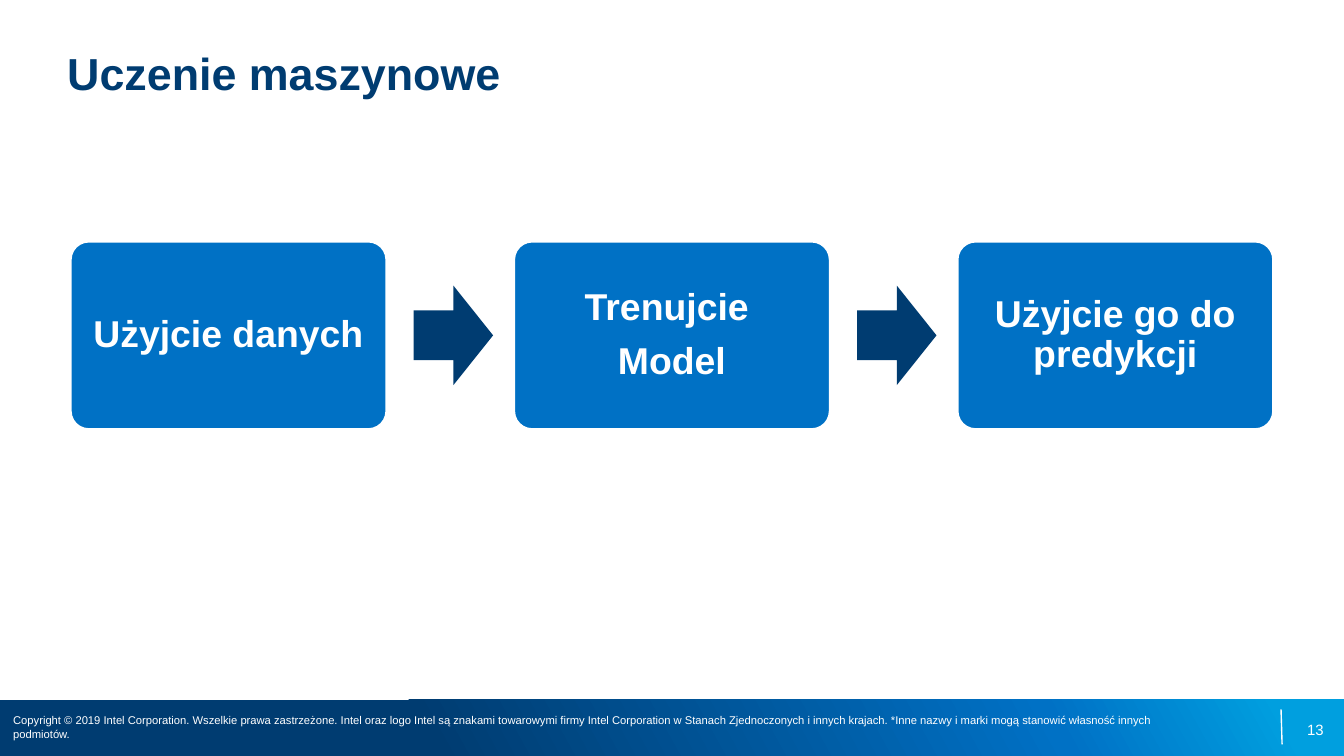
from dataclasses import dataclass

from lxml.etree import SubElement
from pptx import Presentation
from pptx.dml.color import RGBColor
from pptx.enum.shapes import MSO_CONNECTOR, MSO_SHAPE
from pptx.enum.text import MSO_ANCHOR, MSO_AUTO_SIZE, PP_ALIGN
from pptx.oxml import parse_xml
from pptx.oxml.ns import nsdecls, qn
from pptx.shapes.autoshape import Shape
from pptx.slide import Slide
from pptx.text.text import TextFrame
from pptx.util import Cm, Pt

COLORS = {"navy": "003C71", "blue": "0071C5", "sky": "009FDF", "white": "FFFFFF"}
FONT = "Arial"

# Process row, in centimetres
ROW_LEFT, ROW_MIDDLE, STEP_PITCH = 1.32, 6.34, 8.38
STEP_WIDTH, STEP_HEIGHT = 6.0, 3.58
ARROW_OFFSET, ARROW_WIDTH, ARROW_HEIGHT = 6.5, 1.5, 1.88


@dataclass
class Step:
    lines: list[str]


@dataclass
class Style:
    size: float
    color: str
    bold: bool = False
    align: PP_ALIGN = PP_ALIGN.LEFT


STEPS = [
    Step(["Użyjcie danych"]),
    Step(["Trenujcie ", "Model"]),
    Step(["Użyjcie go do predykcji"]),
]
COPYRIGHT = (
    "Copyright © 2019 Intel Corporation. Wszelkie prawa zastrzeżone. "
    "Intel oraz logo Intel są znakami towarowymi firmy Intel Corporation "
    "w Stanach Zjednoczonych i innych krajach. "
    "*Inne nazwy i marki mogą stanowić własność innych podmiotów."
)


def rgb(name: str) -> RGBColor:
    return RGBColor.from_string(COLORS[name])


def write(frame: TextFrame, text: str, style: Style, anchor: MSO_ANCHOR,
          inset_x: float = 0, inset_y: float = 0) -> None:
    frame.text = text
    frame.word_wrap = True
    frame.auto_size = MSO_AUTO_SIZE.NONE
    frame.vertical_anchor = anchor
    frame.margin_left = frame.margin_right = Cm(inset_x)
    frame.margin_top = frame.margin_bottom = Cm(inset_y)
    for para in frame.paragraphs:
        para.alignment = style.align
        for span in para.runs:
            span.font.name = FONT
            span.font.size = Pt(style.size)
            span.font.bold = style.bold
            span.font.color.rgb = rgb(style.color)


def add_block(page: Slide, kind: MSO_SHAPE, left: float, top: float,
              width: float, height: float, color: str) -> Shape:
    block = page.shapes.add_shape(kind, Cm(left), Cm(top), Cm(width), Cm(height))
    block.shadow.inherit = False
    block.fill.solid()
    block.fill.fore_color.rgb = rgb(color)
    block.line.fill.background()
    return block


def add_step(page: Slide, step: Step, left: float) -> None:
    box = add_block(page, MSO_SHAPE.ROUNDED_RECTANGLE, left,
                    ROW_MIDDLE - STEP_HEIGHT / 2, STEP_WIDTH, STEP_HEIGHT, "blue")
    box.adjustments[0] = 0.1
    box.line.color.rgb = rgb("white")
    box.line.width = Pt(2)
    style = Style(20, "white", bold=True, align=PP_ALIGN.CENTER)
    write(box.text_frame, "\n".join(step.lines), style, MSO_ANCHOR.MIDDLE, 0.1, 0.1)
    for index, para in enumerate(box.text_frame.paragraphs):
        para.line_spacing = 0.9
        if index:
            para.space_before = Pt(7)


def add_footer(page: Slide) -> None:
    # Gradient band
    band = add_block(page, MSO_SHAPE.RECTANGLE, 0, 13.23, 25.4, 1.06, "navy")
    stops = [(0, "navy"), (32, "navy"), (78, "blue"), (95, "sky"), (100, "sky")]
    gradient = parse_xml(f'<a:gradFill {nsdecls("a")} rotWithShape="1"><a:gsLst/>'
                         f'<a:lin ang="{331 * 60000}" scaled="0"/></a:gradFill>')
    for position, color in stops:
        stop = SubElement(gradient[0], qn("a:gs"), pos=str(position * 1000))
        SubElement(stop, qn("a:srgbClr"), val=COLORS[color])
    solid = band.element.spPr.find(qn("a:solidFill"))
    solid.getparent().replace(solid, gradient)

    # Divider
    divider = page.shapes.add_connector(
        MSO_CONNECTOR.STRAIGHT, Cm(24.21), Cm(13.41), Cm(24.23), Cm(14.07))
    divider.line.color.rgb = rgb("white")
    divider.line.width = Pt(0.75)
    SubElement(divider.element.spPr, qn("a:effectLst"))

    # Page number and copyright line
    number = page.shapes.add_textbox(Cm(19.1), Cm(13.41), Cm(5.92), Cm(0.76))
    write(number.text_frame, "13", Style(8, "white", align=PP_ALIGN.RIGHT),
          MSO_ANCHOR.MIDDLE)
    notice = page.shapes.add_textbox(Cm(0), Cm(13.49), Cm(22.5), Cm(0.51))
    write(notice.text_frame, COPYRIGHT, Style(6, "white"), MSO_ANCHOR.MIDDLE, 0.25, 0.13)


def main() -> None:
    deck = Presentation()
    deck.slide_width, deck.slide_height = Cm(25.4), Cm(14.29)
    page = deck.slides.add_slide(deck.slide_layouts[5])

    add_footer(page)

    # Title
    title = page.shapes.title
    title.left, title.top, title.width, title.height = Cm(1.27), Cm(0.86), Cm(22.86), Cm(2.41)
    write(title.text_frame, "Uczenie maszynowe", Style(24, "navy", bold=True), MSO_ANCHOR.TOP)

    # Steps with an arrow between neighbours
    for index, step in enumerate(STEPS):
        left = ROW_LEFT + index * STEP_PITCH
        add_step(page, step, left)
        if index < len(STEPS) - 1:
            add_block(page, MSO_SHAPE.RIGHT_ARROW, left + ARROW_OFFSET,
                      ROW_MIDDLE - ARROW_HEIGHT / 2, ARROW_WIDTH, ARROW_HEIGHT, "navy")

    deck.save("out.pptx")


if __name__ == "__main__":
    main()
